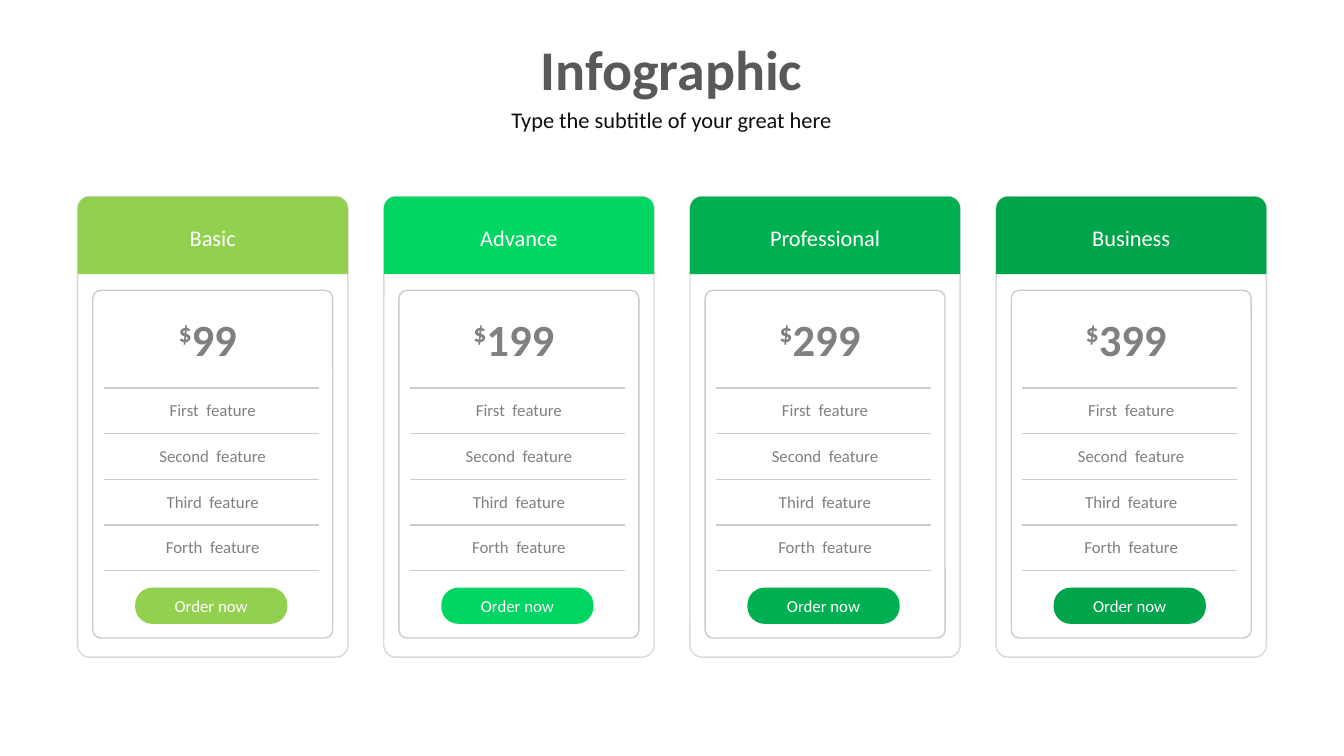
from lxml import etree
from pptx import Presentation
from pptx import util as u
from pptx.dml.color import RGBColor
from pptx.enum import shapes, text
from pptx.oxml.ns import qn

COLORS = {
    "title": "595959", "subtitle": "0D0D0D", "body": "808080", "white": "FFFFFF",
    "rule": "CCCCCC", "card": "D9D9D9",
    "basic": "92D050", "advance": "00D661", "professional": "00B050", "business": "00A44A",
}
PLANS = [("Basic", "99"), ("Advance", "199"), ("Professional", "299"), ("Business", "399")]
FEATURES = ["First  feature", "Second  feature", "Third  feature", "Forth  feature"]

FIRST_LEFT, LAST_LEFT, CARD_WIDTH = 0.77, 9.88, 2.68
CARD_PITCH = (LAST_LEFT - FIRST_LEFT) / (len(PLANS) - 1)
FIRST_RULE, LAST_RULE = 3.85, 5.66
ROW_HEIGHT = (LAST_RULE - FIRST_RULE) / len(FEATURES)


def add_block(kind, left, top, width, height, radius, fill=None, line=None):
    """Add a shape with rounded corners of the given radius in inches."""
    shape = slide.shapes.add_shape(
        kind, u.Inches(left), u.Inches(top), u.Inches(width), u.Inches(height))
    shape.adjustments[0] = radius / min(width, height)
    shape.shadow.inherit = False
    if fill:
        shape.fill.solid()
        shape.fill.fore_color.rgb = RGBColor.from_string(COLORS[fill])
    else:
        shape.fill.background()
    if line:
        shape.line.color.rgb = RGBColor.from_string(COLORS[line])
        shape.line.width = u.Pt(1)
    else:
        shape.line.fill.background()
    return shape


def write(shape, pieces, size, color, bold=False):
    """Fill the shape with one centred paragraph, one run per piece."""
    paragraph = shape.text_frame.paragraphs[0]
    paragraph.alignment = text.PP_ALIGN.CENTER
    for piece in pieces:
        run = paragraph.add_run()
        run.text = piece
        run.font.name = "Calibri"
        run.font.size = u.Pt(size)
        run.font.bold = bold
        run.font.color.rgb = RGBColor.from_string(COLORS[color])
    return paragraph


presentation = Presentation()
presentation.slide_width = u.Inches(13.33)
presentation.slide_height = u.Inches(7.5)
slide = presentation.slides.add_slide(presentation.slide_layouts[0])

headings = [
    (slide.shapes.title, "Infographic", 0.37, 0.72, 40, "title", True),
    (slide.placeholders[1], "Type the subtitle of your great here", 1.03, 0.53, 16, "subtitle", False),
]
for placeholder, wording, top, height, size, color, bold in headings:
    placeholder.left, placeholder.top = u.Inches(0.57), u.Inches(top)
    placeholder.width, placeholder.height = u.Inches(12.18), u.Inches(height)
    placeholder.text_frame.auto_size = text.MSO_AUTO_SIZE.NONE
    placeholder.text_frame.vertical_anchor = text.MSO_ANCHOR.TOP
    paragraph = write(placeholder, [wording], size, color, bold)
    paragraph.line_spacing = 0.9
    paragraph.space_before = u.Pt(0)

for column, (plan, price) in enumerate(PLANS):
    left = FIRST_LEFT + column * CARD_PITCH
    color = plan.lower()

    add_block(shapes.MSO_SHAPE.ROUNDED_RECTANGLE, left, 1.95, CARD_WIDTH, 4.57, 0.12, line="card")
    header = add_block(
        shapes.MSO_SHAPE.ROUND_2_SAME_RECTANGLE, left, 1.95, CARD_WIDTH, 0.77, 0.12, fill=color)
    write(header, [plan], 16, "white")
    add_block(shapes.MSO_SHAPE.ROUNDED_RECTANGLE, left + 0.15, 2.88, 2.38, 3.45, 0.08, line="rule")

    for row in range(len(FEATURES) + 1):
        y = u.Inches(FIRST_RULE + row * ROW_HEIGHT)
        rule = slide.shapes.add_connector(
            shapes.MSO_CONNECTOR.STRAIGHT, u.Inches(left + 0.26), y, u.Inches(left + 2.39), y)
        rule.line.color.rgb = RGBColor.from_string(COLORS["rule"])
        rule.line.width = u.Pt(1)
        etree.SubElement(rule._element.spPr, qn("a:effectLst"))

    labels = [(["$", price], 1.29, 3.04, 1.04, 0.64, 31.9, True)]
    for row, feature in enumerate(FEATURES):
        labels.append(([feature], 1.34, 3.92 + row * ROW_HEIGHT, 1.28, 0.3, 12, False))
    for pieces, center, top, width, height, size, bold in labels:
        box = slide.shapes.add_textbox(
            u.Inches(left + center - width / 2), u.Inches(top), u.Inches(width), u.Inches(height))
        box.text_frame.word_wrap = False
        box.text_frame.auto_size = text.MSO_AUTO_SIZE.SHAPE_TO_FIT_TEXT
        paragraph = write(box, pieces, size, "body", bold)
        if pieces[0] == "$":
            paragraph.runs[0]._r.get_or_add_rPr().set("baseline", "30000")

    button = add_block(
        shapes.MSO_SHAPE.ROUNDED_RECTANGLE, left + 0.57, 5.83, 1.51, 0.36, 0.17, fill=color)
    write(button, ["Order now"], 12, "white")

presentation.save("out.pptx")
